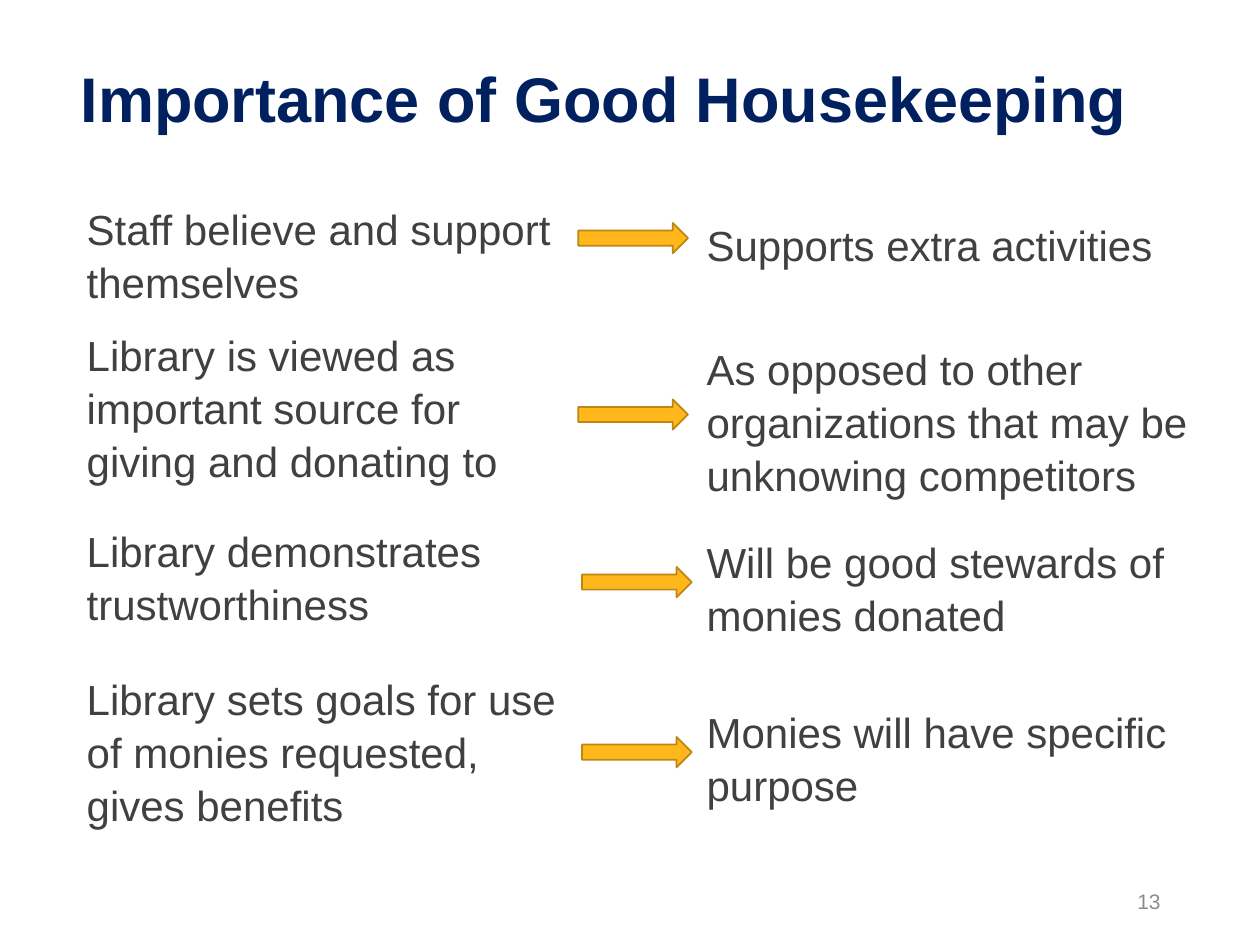
import pptx
import pptx.dml.color
import pptx.enum.shapes
import pptx.enum.text
import pptx.util
from pptx.util import Inches

FONT = "Arial"
COLUMN_WIDTH = 4.03
STATEMENT_LEFT = 0.59
OUTCOME_LEFT = 5.51
ARROW_SIZE = (0.87, 0.24)

ROWS = [
    {"statement": ("Staff believe and support themselves", 1.55, 0.71),
     "arrow": (4.59, 1.77),
     "outcome": ("Supports extra activities", 1.67, 0.5)},
    {"statement": ("Library is viewed as important source for giving and donating to", 2.55, 1.52),
     "arrow": (4.59, 3.17),
     "outcome": ("As opposed to other organizations that may be unknowing competitors", 2.66, 1.31)},
    {"statement": ("Library demonstrates trustworthiness", 4.1, 1.06),
     "arrow": (4.62, 4.5),
     "outcome": ("Will be good stewards of monies donated", 4.19, 0.91)},
    {"statement": ("Library sets goals for use of monies requested, gives benefits", 5.28, 1.41),
     "arrow": (4.62, 5.85),
     "outcome": ("Monies will have specific purpose", 5.54, 0.91)},
]


def color(hex_string):
    return pptx.dml.color.RGBColor.from_string(hex_string)


def write_text(shape, text, size, hex_string, bold=False, alignment="LEFT",
               anchor="TOP", line_spacing=1.0):
    frame = shape.text_frame
    frame.word_wrap = True
    frame.auto_size = pptx.enum.text.MSO_AUTO_SIZE.NONE
    frame.vertical_anchor = pptx.enum.text.MSO_ANCHOR[anchor]
    paragraph = frame.paragraphs[0]
    paragraph.alignment = pptx.enum.text.PP_ALIGN[alignment]
    paragraph.line_spacing = line_spacing
    run = paragraph.add_run()
    run.text = text
    run.font.name = FONT
    run.font.size = pptx.util.Pt(size)
    run.font.bold = bold
    run.font.color.rgb = color(hex_string)


def add_title(slide, left, top, width, height):
    title = slide.shapes.title
    title.left, title.top = Inches(left), Inches(top)
    title.width, title.height = Inches(width), Inches(height)
    write_text(title, "Importance of Good Housekeeping", 36, "002060",
               bold=True, anchor="MIDDLE")


def add_column_text(slide, left, text, top, height):
    box = slide.shapes.add_textbox(Inches(left), Inches(top),
                                   Inches(COLUMN_WIDTH), Inches(height))
    write_text(box, text, 24, "404040", line_spacing=1.05)


def add_arrow(slide, left, top, width, height):
    arrow = slide.shapes.add_shape(pptx.enum.shapes.MSO_SHAPE.RIGHT_ARROW,
                                   Inches(left), Inches(top),
                                   Inches(width), Inches(height))
    arrow.shadow.inherit = False
    arrow.fill.solid()
    arrow.fill.fore_color.rgb = color("FFB71B")
    arrow.line.color.rgb = color("BD8714")
    arrow.line.width = pptx.util.Pt(1)


def add_row(slide, row):
    add_column_text(slide, STATEMENT_LEFT, *row["statement"])
    add_arrow(slide, *row["arrow"], *ARROW_SIZE)
    add_column_text(slide, OUTCOME_LEFT, *row["outcome"])


def add_slide_number(slide, left, top, width, height):
    box = slide.shapes.add_textbox(Inches(left), Inches(top),
                                   Inches(width), Inches(height))
    write_text(box, "13", 12, "8C8C8C", alignment="RIGHT", anchor="MIDDLE")


def main():
    presentation = pptx.Presentation()
    presentation.slide_width = Inches(10)
    presentation.slide_height = Inches(7.5)
    slide = presentation.slides.add_slide(presentation.slide_layouts[5])
    add_title(slide, 0.54, 0.29, 9, 0.96)
    for row in ROWS:
        add_row(slide, row)
    add_slide_number(slide, 7.06, 6.95, 2.25, 0.4)
    presentation.save("out.pptx")


if __name__ == "__main__":
    main()
